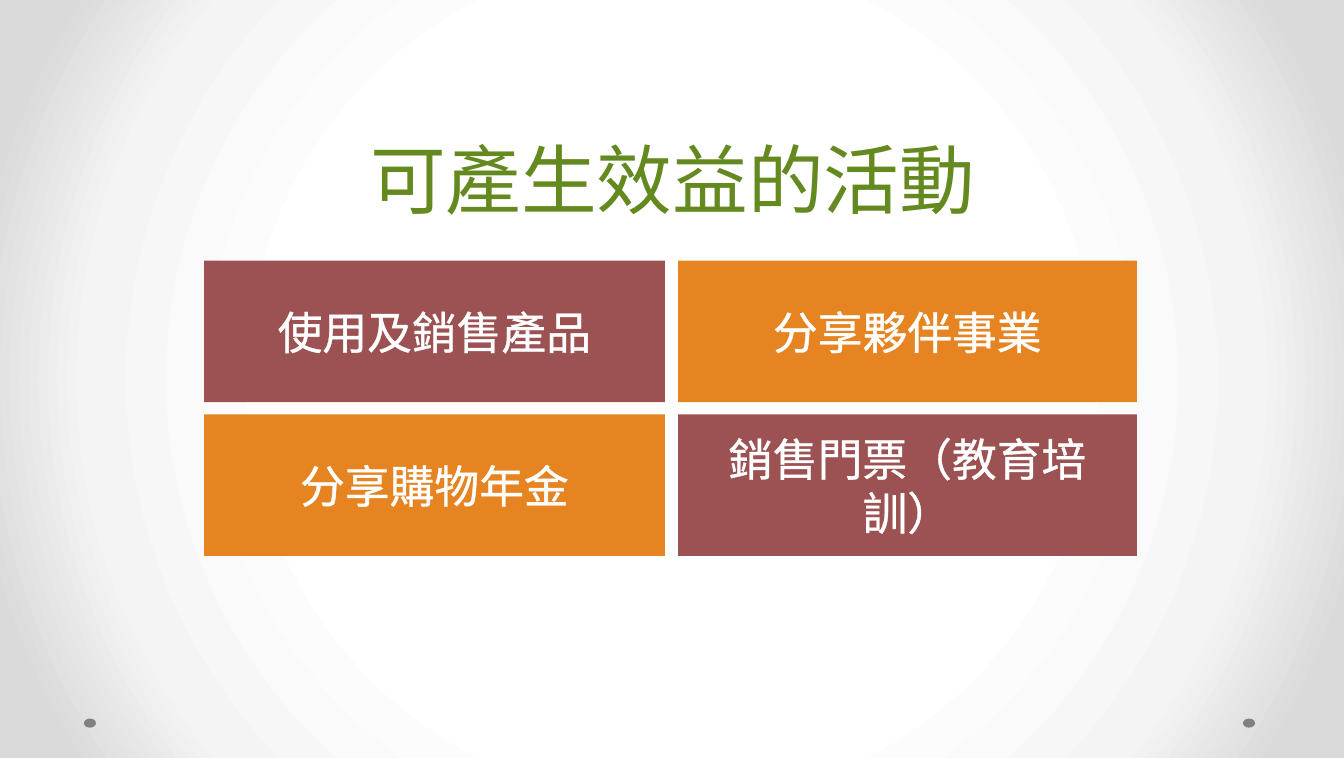
from lxml import etree
from pptx import Presentation
from pptx.dml.color import RGBColor
from pptx.enum.shapes import MSO_SHAPE
from pptx.enum.text import MSO_ANCHOR, PP_ALIGN
from pptx.oxml import parse_xml
from pptx.oxml.ns import nsdecls, qn
from pptx.util import Inches, Pt

OVAL, RECTANGLE = MSO_SHAPE.OVAL, MSO_SHAPE.RECTANGLE
MIDDLE, CENTER = MSO_ANCHOR.MIDDLE, PP_ALIGN.CENTER
FONT = "Noto Sans CJK TC"
GREEN, RED, ORANGE, GRAY, WHITE = "63891F", "9C5252", "E68422", "808080", "FFFFFF"


def write(box, text, size, color):
    """Put centred text with a thin outline of its own colour into a box."""
    box.text_frame.vertical_anchor = MIDDLE
    para = box.text_frame.paragraphs[0]
    para.alignment = CENTER
    span = para.add_run()
    span.text = text
    for name, value in {"size": Pt(size), "name": FONT}.items():
        setattr(span.font, name, value)
    span.font.color.rgb = RGBColor.from_string(color)
    properties = span.font._element
    properties.insert(0, parse_xml(
        f'<a:ln {nsdecls("a")} w="{Pt(0.75)}"><a:solidFill>'
        f'<a:srgbClr val="{color}"/></a:solidFill></a:ln>'))
    etree.SubElement(properties, qn("a:ea")).set("typeface", FONT)


def add_filled(kind, left, top, width, height, color):
    box = page.shapes.add_shape(
        kind, Inches(left), Inches(top), Inches(width), Inches(height))
    box.shadow.inherit = False
    box.fill.solid()
    box.fill.fore_color.rgb = RGBColor.from_string(color)
    box.line.fill.background()
    return box


deck = Presentation()
deck.slide_width, deck.slide_height = Inches(13.3), Inches(7.5)
page = deck.slides.add_slide(deck.slide_layouts[6])

# Radial background, white in the centre
page.background.fill.gradient()
gradient = page.element.find(".//" + qn("a:gradFill"))
stops = "".join(
    f'<a:gs pos="{share * 1000}"><a:srgbClr val="{color}"/></a:gs>'
    for share, color in [(50, WHITE), (76, "F4F4F4"), (92, "DADADA")])
gradient.getparent().replace(gradient, parse_xml(
    f'<a:gradFill {nsdecls("a")} rotWithShape="1"><a:gsLst>{stops}</a:gsLst>'
    '<a:path path="circle"><a:fillToRect l="50000" t="50000" r="50000" b="50000"/>'
    '</a:path></a:gradFill>'))

# Footer dots
for left in (12.3, 0.83):
    add_filled(OVAL, left, 7.11, 0.12, 0.09, GRAY)

title = page.shapes.add_textbox(Inches(3.53), Inches(1.26), Inches(6.25), Inches(1.01))
title.text_frame.word_wrap = False
write(title, "可產生效益的活動", 53.9, GREEN)

# Two by two grid of activities, colours in a checkerboard
activities = [["使用及銷售產品", "分享夥伴事業"],
              ["分享購物年金", "銷售門票（教育培訓）"]]
columns = [(2.02, 4.56), (6.71, 4.54)]
for row, labels in enumerate(activities):
    for column, label in enumerate(labels):
        left, width = columns[column]
        color = (RED, ORANGE)[(row + column) % 2]
        tile = add_filled(RECTANGLE, left, 2.58 + row * 1.52, width, 1.4, color)
        write(tile, label, 31.9, WHITE)

deck.save("out.pptx")
